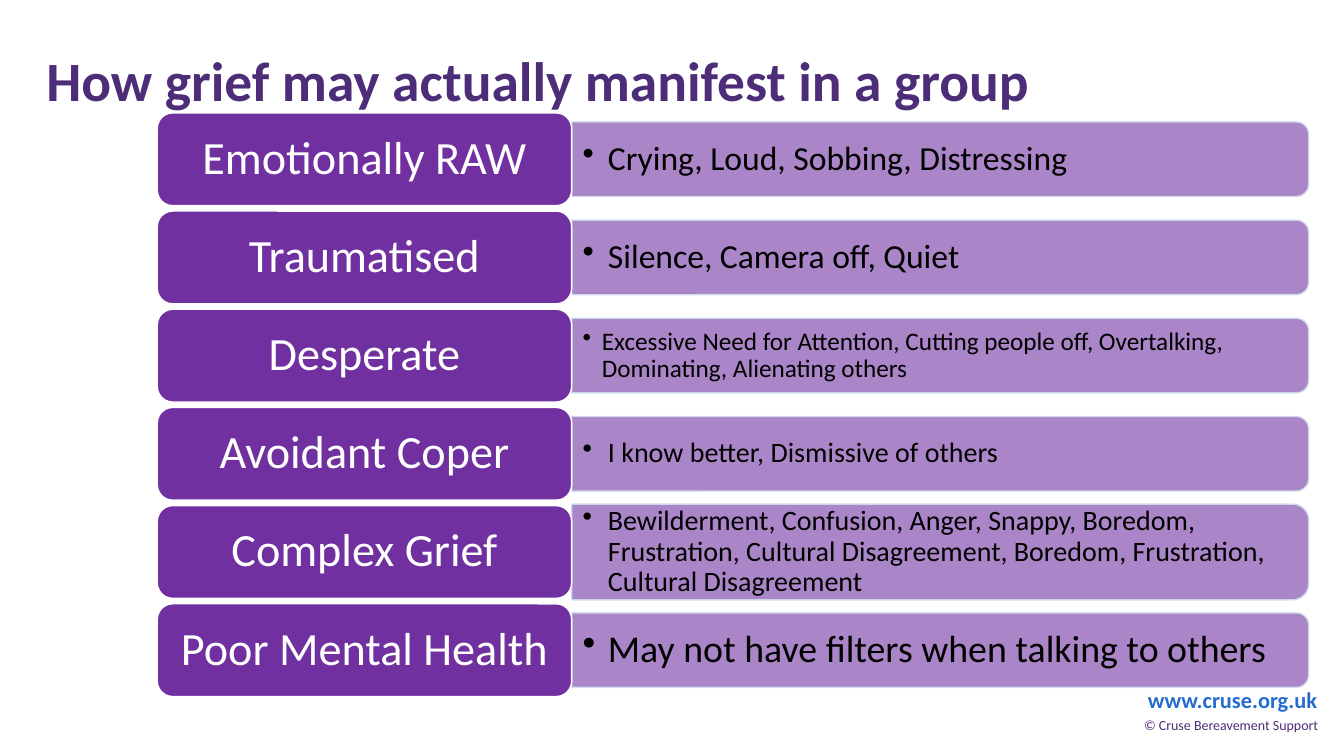
from lxml.etree import SubElement
from pptx import Presentation
from pptx.dml.color import RGBColor
from pptx.enum.shapes import MSO_SHAPE
from pptx.enum.text import MSO_ANCHOR, MSO_AUTO_SIZE, PP_ALIGN
from pptx.oxml.ns import qn
from pptx.util import Inches, Pt


class Theme:
    font = "Calibri"
    colors = {
        "heading": "4D2D78",
        "link": "256CD0",
        "purple": "7030A0",
        "bar_line": "D2DEEF",
        "white": "FFFFFF",
        "black": "000000",
    }
    sizes = {"title": 39.6, "label": 33, "link": 16, "copyright": 10}

    def color(self, name):
        return RGBColor.from_string(self.colors[name])


# Label, detail, detail type size, bullet indent, bar height
REACTIONS = [
    ("Emotionally RAW", "Crying, Loud, Sobbing, Distressing", 24, 0.25, 0.74),
    ("Traumatised", "Silence, Camera off, Quiet", 24, 0.25, 0.74),
    ("Desperate", "Excessive Need for Attention, Cutting people off, Overtalking, "
     "Dominating, Alienating others", 18, 0.19, 0.74),
    ("Avoidant Coper", "I know better, Dismissive of others", 20, 0.25, 0.74),
    ("Complex Grief", "Bewilderment, Confusion, Anger, Snappy, Boredom, Frustration, "
     "Cultural Disagreement, Boredom, Frustration, Cultural Disagreement", 20, 0.25, 0.95),
    ("Poor Mental Health", "May not have filters when talking to others", 27, 0.25, 0.74),
]
FIRST_TOP, LAST_TOP = 1.12, 5.99
LABEL_LEFT, LABEL_WIDTH, LABEL_HEIGHT = 1.56, 4.11, 0.92
BAR_LEFT, BAR_WIDTH = LABEL_LEFT + LABEL_WIDTH, 7.31


def set_attributes(target, values):
    for name, value in values.items():
        setattr(target, name, value)


def set_alpha(color_format, percent):
    """Make a solid fill of a shape or line partly transparent."""
    color = color_format.find(".//" + qn("a:srgbClr"))
    SubElement(color, qn("a:alpha"), val=str(percent * 1000))


class SlideBuilder:
    def __init__(self, slide, theme):
        self.slide = slide
        self.theme = theme

    def fill_text(self, shape, text, size, color, bold=False, align=PP_ALIGN.LEFT,
                  anchor=MSO_ANCHOR.MIDDLE, spacing=0.9, inset=(0.1, 0.05), indent=0):
        frame = shape.text_frame
        across, down = (Inches(value) for value in inset)
        set_attributes(frame, {
            "word_wrap": True, "auto_size": MSO_AUTO_SIZE.NONE, "vertical_anchor": anchor,
            "margin_left": across, "margin_right": across,
            "margin_top": down, "margin_bottom": down,
        })
        para = frame.paragraphs[0]
        set_attributes(para, {"alignment": align, "line_spacing": spacing})
        if indent:
            properties = para._p.get_or_add_pPr()
            properties.set("marL", str(Inches(indent)))
            properties.set("indent", str(-Inches(indent)))
            SubElement(properties, qn("a:buChar"), char="•")
        span = para.add_run()
        span.text = text
        set_attributes(span.font, {"name": self.theme.font, "size": Pt(size), "bold": bold})
        span.font.color.rgb = self.theme.color(color)

    def title(self, text, left, top, width, height):
        title = self.slide.shapes.title
        set_attributes(title, {"left": Inches(left), "top": Inches(top),
                               "width": Inches(width), "height": Inches(height)})
        self.fill_text(title, text, self.theme.sizes["title"], "heading", bold=True)

    def text(self, text, left, top, width, height, size, color, **style):
        box = self.slide.shapes.add_textbox(*map(Inches, (left, top, width, height)))
        self.fill_text(box, text, size, color, **style)

    def shape(self, kind, left, top, width, height, line):
        shape = self.slide.shapes.add_shape(kind, *map(Inches, (left, top, width, height)))
        shape.shadow.inherit = False
        shape.fill.solid()
        shape.fill.fore_color.rgb = self.theme.color("purple")
        shape.line.color.rgb = self.theme.color(line)
        shape.line.width = Pt(1)
        return shape

    def bar(self, left, middle, length, height):
        """Draw a bar rounded on its right end, by turning a top-rounded shape."""
        bar = self.shape(MSO_SHAPE.ROUND_2_SAME_RECTANGLE, left + (length - height) / 2,
                         middle - length / 2, height, length, "bar_line")
        bar.rotation = 90
        properties = bar._element.spPr
        set_alpha(properties.find(qn("a:solidFill")), 59)
        set_alpha(properties.find(qn("a:ln")), 90)

    def reaction(self, top, label, detail, size, indent, bar_height):
        middle = top + LABEL_HEIGHT / 2
        self.bar(BAR_LEFT, middle, BAR_WIDTH, bar_height)
        text_height = bar_height - 0.07
        self.text(detail, BAR_LEFT, middle - text_height / 2, BAR_WIDTH - 0.04, text_height,
                  size, "black", inset=(0.11, 0.06), indent=indent)
        tile = self.shape(MSO_SHAPE.ROUNDED_RECTANGLE, LABEL_LEFT, top,
                          LABEL_WIDTH, LABEL_HEIGHT, "white")
        self.fill_text(tile, label, self.theme.sizes["label"], "white",
                       align=PP_ALIGN.CENTER, inset=(0.14, 0.07))


def main():
    deck = Presentation()
    set_attributes(deck, {"slide_width": Inches(13.33), "slide_height": Inches(7.5)})
    theme = Theme()
    page = SlideBuilder(deck.slides.add_slide(deck.slide_layouts[5]), theme)

    footer = {"align": PP_ALIGN.CENTER, "anchor": MSO_ANCHOR.TOP, "spacing": 1.0}
    page.text("www.cruse.org.uk", 11.26, 6.76, 1.93, 0.37,
              theme.sizes["link"], "link", bold=True, **footer)
    page.text("© Cruse Bereavement Support", 11.2, 7.06, 2.02, 0.44,
              theme.sizes["copyright"], "heading", **footer)
    page.title("How grief may actually manifest in a group", 0.36, 0.2, 10.17, 1.25)

    pitch = (LAST_TOP - FIRST_TOP) / (len(REACTIONS) - 1)
    for row, reaction in enumerate(REACTIONS):
        page.reaction(FIRST_TOP + row * pitch, *reaction)

    deck.save("out.pptx")


if __name__ == "__main__":
    main()
